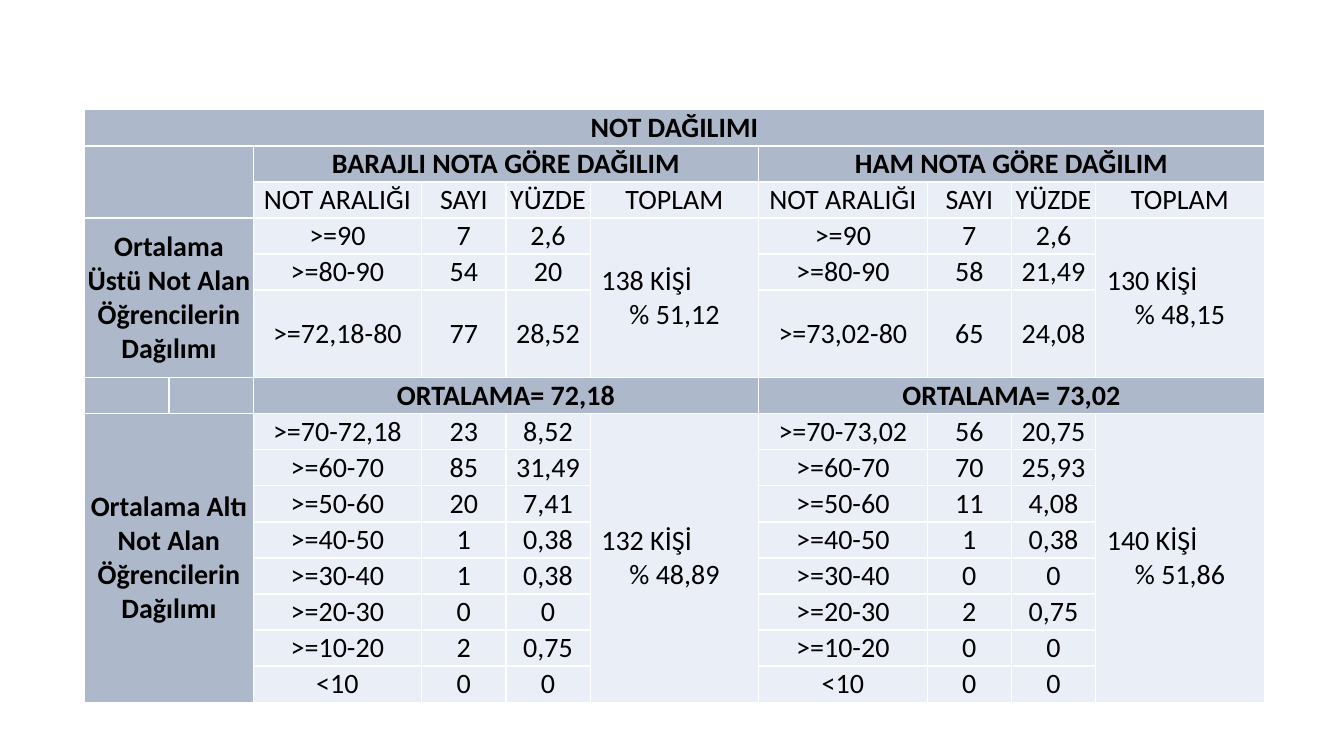
from dataclasses import dataclass

from lxml import etree
from pptx import Presentation
from pptx import util as u
from pptx.dml import color
from pptx.enum import text
from pptx.oxml import ns
from pptx.table import Table, _Cell

HEADER, BODY, WHITE, BLACK = "ADB9CA", "EAEFF7", "FFFFFF", "000000"
UNIT = 60.19
COL_UNITS = [1, 1, 2, 1, 1, 2, 2, 1, 1, 2]
ROW_HEIGHT, TALL_ROW, TALL_HEIGHT = 25.75, 5, 62.7
ROW_COUNT, UPPER_ROW, MEAN_ROW, LOWER_ROW = 15, 3, 6, 7
COLUMN_HEADS = ["NOT ARALIĞI", "SAYI", "YÜZDE", "TOPLAM"]


@dataclass
class Band:
    """Grade ranges on one side of the mean, with their total."""
    rows: list[tuple[str, str, str]]
    people: str
    percent: str


@dataclass
class Distribution:
    first_col: int
    title: str
    mean: str
    upper: Band
    lower: Band


@dataclass
class SideLabel:
    row: int
    height: int
    label: str


DISTRIBUTIONS = [
    Distribution(
        2, "BARAJLI NOTA GÖRE DAĞILIM", "ORTALAMA= 72,18",
        Band([(">=90", "7", "2,6"), (">=80-90", "54", "20"),
              (">=72,18-80", "77", "28,52")], "138 KİŞİ", "% 51,12"),
        Band([(">=70-72,18", "23", "8,52"), (">=60-70", "85", "31,49"),
              (">=50-60", "20", "7,41"), (">=40-50", "1", "0,38"),
              (">=30-40", "1", "0,38"), (">=20-30", "0", "0"),
              (">=10-20", "2", "0,75"), ("<10", "0", "0")],
             "132 KİŞİ", "% 48,89")),
    Distribution(
        6, "HAM NOTA GÖRE DAĞILIM", "ORTALAMA= 73,02",
        Band([(">=90", "7", "2,6"), (">=80-90", "58", "21,49"),
              (">=73,02-80", "65", "24,08")], "130 KİŞİ", "% 48,15"),
        Band([(">=70-73,02", "56", "20,75"), (">=60-70", "70", "25,93"),
              (">=50-60", "11", "4,08"), (">=40-50", "1", "0,38"),
              (">=30-40", "0", "0"), (">=20-30", "2", "0,75"),
              (">=10-20", "0", "0"), ("<10", "0", "0")],
             "140 KİŞİ", "% 51,86")),
]
SIDE_LABELS = [
    SideLabel(UPPER_ROW, 3, "Ortalama Üstü Not Alan Öğrencilerin Dağılımı"),
    SideLabel(LOWER_ROW, 8, "Ortalama Altı Not Alan Öğrencilerin Dağılımı"),
]


def rgb(value: str) -> color.RGBColor:
    return color.RGBColor.from_string(value)


def set_borders(cell: _Cell) -> None:
    tc_pr = cell._tc.get_or_add_tcPr()
    for i, side in enumerate(("lnL", "lnR", "lnT", "lnB")):
        ln = etree.Element(ns.qn(f"a:{side}"), w=str(u.Pt(1)))
        fill = etree.SubElement(ln, ns.qn("a:solidFill"))
        etree.SubElement(fill, ns.qn("a:srgbClr"), val=WHITE)
        tc_pr.insert(i, ln)


def style_cell(cell: _Cell, fill: str) -> None:
    cell.fill.solid()
    cell.fill.fore_color.rgb = rgb(fill)
    cell.margin_left = cell.margin_right = u.Pt(0)
    cell.margin_top = cell.margin_bottom = u.Pt(0)
    cell.vertical_anchor = text.MSO_ANCHOR.MIDDLE
    set_borders(cell)


def add_run(p, content: str, bold: bool) -> None:
    r = p.add_run()
    r.text = content
    r.font.name = "Calibri"
    r.font.size = u.Pt(20)
    r.font.bold = bold
    r.font.color.rgb = rgb(BLACK)


def write(cell: _Cell, content: str, bold: bool = False) -> None:
    p = cell.text_frame.paragraphs[0]
    p.alignment = text.PP_ALIGN.CENTER
    add_run(p, content, bold)


def write_total(cell: _Cell, band: Band) -> None:
    """Put the percentage under the head count, set in by a hanging indent."""
    p = cell.text_frame.paragraphs[0]
    p.alignment = text.PP_ALIGN.LEFT
    p_pr = p._p.get_or_add_pPr()
    p_pr.set("marL", str(u.Pt(28)))
    p_pr.set("indent", str(u.Pt(-20)))
    add_run(p, band.people, False)
    p.add_line_break()
    add_run(p, band.percent, False)


def merge(table: Table, row: int, col: int, height: int, width: int) -> _Cell:
    cell = table.cell(row, col)
    cell.merge(table.cell(row + height - 1, col + width - 1))
    return cell


def fill_band(table: Table, band: Band, top: int, left: int) -> None:
    for i, values in enumerate(band.rows):
        for j, value in enumerate(values):
            write(table.cell(top + i, left + j), value)
    write_total(merge(table, top, left + 3, len(band.rows), 1), band)


def fill_distribution(table: Table, dist: Distribution) -> None:
    left = dist.first_col
    for row, heading in ((1, dist.title), (MEAN_ROW, dist.mean)):
        write(merge(table, row, left, 1, 4), heading, bold=True)
    for j, head in enumerate(COLUMN_HEADS):
        write(table.cell(2, left + j), head)
    fill_band(table, dist.upper, UPPER_ROW, left)
    fill_band(table, dist.lower, LOWER_ROW, left)


def add_grade_table(slide) -> Table:
    """Add the styled, still empty grid."""
    heights = [TALL_HEIGHT if i == TALL_ROW else ROW_HEIGHT
               for i in range(ROW_COUNT)]
    table = slide.shapes.add_table(
        ROW_COUNT, len(COL_UNITS), u.Pt(60.5), u.Pt(78.5),
        u.Pt(UNIT * sum(COL_UNITS)), u.Pt(sum(heights))).table
    table.first_row = table.horz_banding = False
    for column, units in zip(table.columns, COL_UNITS):
        column.width = u.Pt(UNIT * units)
    for i, (row, height) in enumerate(zip(table.rows, heights)):
        row.height = u.Pt(height)
        for j, cell in enumerate(row.cells):
            is_header = i in (0, 1, MEAN_ROW) or j < 2
            style_cell(cell, HEADER if is_header else BODY)
    return table


def main() -> None:
    prs = Presentation()
    prs.slide_width, prs.slide_height = u.Pt(960), u.Pt(540)
    s = prs.slides.add_slide(prs.slide_layouts[6])
    table = add_grade_table(s)
    write(merge(table, 0, 0, 1, len(COL_UNITS)), "NOT DAĞILIMI", bold=True)
    merge(table, 1, 0, 2, 2)
    for side in SIDE_LABELS:
        write(merge(table, side.row, 0, side.height, 2), side.label, bold=True)
    for dist in DISTRIBUTIONS:
        fill_distribution(table, dist)
    prs.save("out.pptx")


if __name__ == "__main__":
    main()
